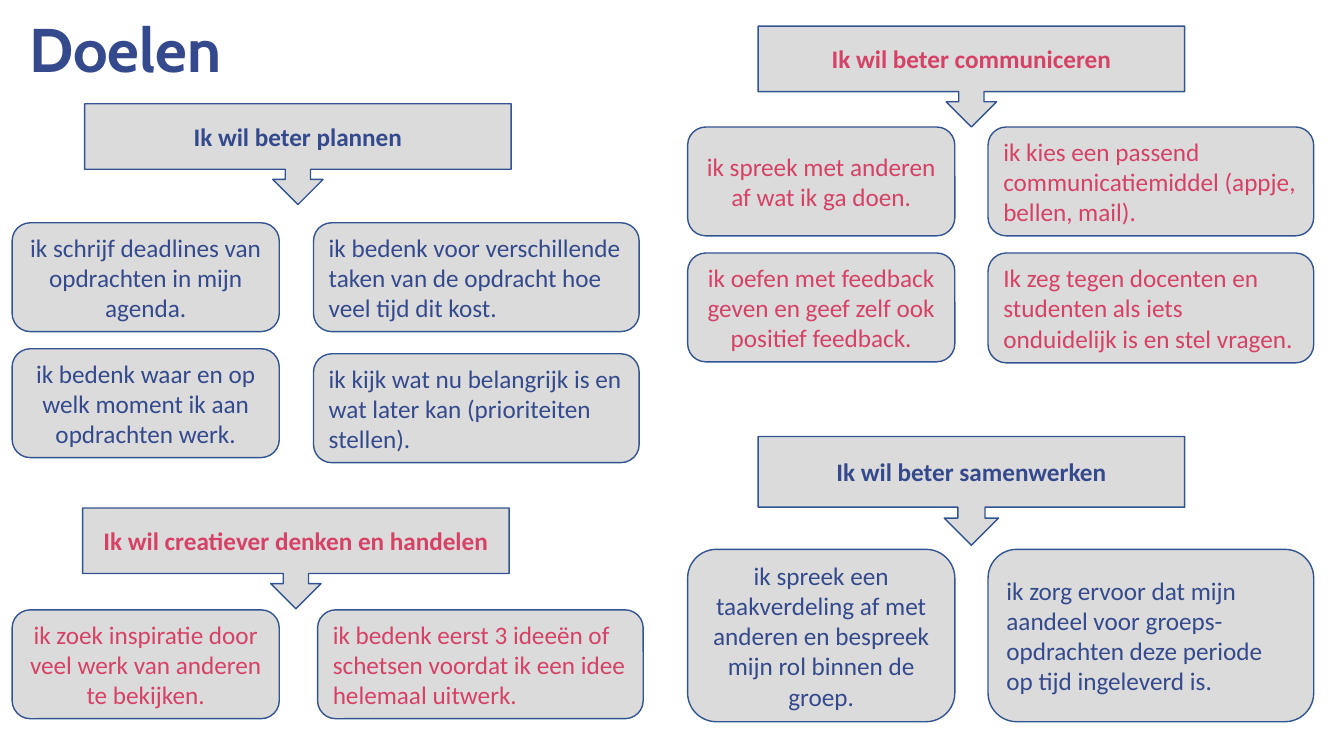
"""Build the slide "Doelen": four learning goals, each with its actions."""
from pptx import Presentation
from pptx.dml.color import RGBColor
from pptx.enum.shapes import MSO_SHAPE
from pptx.enum.text import MSO_ANCHOR, PP_ALIGN
from pptx.util import Inches, Pt

CALLOUT = MSO_SHAPE.DOWN_ARROW_CALLOUT
ROUNDED = MSO_SHAPE.ROUNDED_RECTANGLE
MIDDLE = MSO_ANCHOR.MIDDLE
LEFT, CENTER = PP_ALIGN.LEFT, PP_ALIGN.CENTER
COLORS = {"blue": "344A8D", "pink": "D64166", "fill": "DBDBDB", "line": "325491"}
GOAL_WIDTH, NARROW, WIDE = 4.23, 2.65, 3.23

GOALS = [
    ("Ik wil beter plannen", "blue", 0.84, 1.03, 1, [
        (0.12, 2.21, NARROW, 1.08, CENTER,
         "ik schrijf deadlines van opdrachten in mijn agenda."),
        (3.11, 2.21, WIDE, 1.08, LEFT,
         "ik bedenk voor verschillende taken van de opdracht hoe veel tijd dit kost."),
        (0.12, 3.46, NARROW, 1.08, CENTER,
         "ik bedenk waar en op welk moment ik aan opdrachten werk."),
        (3.11, 3.51, WIDE, 1.08, LEFT,
         "ik kijk wat nu belangrijk is en wat later kan (prioriteiten stellen)."),
    ]),
    ("Ik wil beter communiceren", "pink", 7.52, 0.26, 1, [
        (6.82, 1.26, NARROW, 1.08, CENTER,
         "ik spreek met anderen af wat ik ga doen."),
        (9.8, 1.26, WIDE, 1.08, LEFT,
         "ik kies een passend communicatiemiddel (appje, bellen, mail)."),
        (6.82, 2.51, NARROW, 1.08, CENTER,
         "ik oefen met feedback geven en geef zelf ook positief feedback."),
        (9.8, 2.51, WIDE, 1.09, LEFT,
         "Ik zeg tegen docenten en studenten als iets onduidelijk is en stel vragen."),
    ]),
    ("Ik wil beter samenwerken", "blue", 7.52, 4.33, 1.08, [
        (6.82, 5.45, NARROW, 1.71, CENTER,
         "ik spreek een taakverdeling af met anderen en bespreek mijn rol binnen de groep."),
        (9.8, 5.45, WIDE, 1.71, LEFT,
         "ik zorg ervoor dat mijn aandeel voor groeps-opdrachten deze periode\n"
         "op tijd ingeleverd is."),
    ]),
    ("Ik wil creatiever denken en handelen", "pink", 0.82, 5.04, 1, [
        (0.12, 6.05, NARROW, 1.08, CENTER,
         "ik zoek inspiratie door veel werk van anderen te bekijken."),
        (3.15, 6.05, WIDE, 1.08, LEFT,
         "ik bedenk eerst 3 ideeën of schetsen voordat ik een idee helemaal uitwerk."),
    ]),
]


def write_text(box, text, color, size=18, bold=False, align=LEFT, font="Calibri"):
    frame = box.text_frame
    frame.word_wrap = True
    frame.vertical_anchor = MIDDLE
    frame.text = text
    for paragraph in frame.paragraphs:
        paragraph.alignment = align
        paragraph.font.name = font
        paragraph.font.size = Pt(size)
        paragraph.font.bold = bold
        paragraph.font.color.rgb = RGBColor.from_string(COLORS[color])


def add_box(page, kind, left, top, width, height):
    box = page.shapes.add_shape(
        kind, Inches(left), Inches(top), Inches(width), Inches(height))
    box.shadow.inherit = False
    box.fill.solid()
    box.fill.fore_color.rgb = RGBColor.from_string(COLORS["fill"])
    box.line.color.rgb = RGBColor.from_string(COLORS["line"])
    box.line.width = Pt(1)
    return box


deck = Presentation()
deck.slide_width, deck.slide_height = Inches(13.33), Inches(7.5)
page = deck.slides.add_slide(deck.slide_layouts[6])

title = page.shapes.add_textbox(Inches(0.19), Inches(0.11), Inches(11.65), Inches(0.83))
write_text(title, "Doelen", "blue", size=44, bold=True, font="Cabin")
title.text_frame.paragraphs[0].line_spacing = 0.9

for goal, color, goal_left, goal_top, goal_height, actions in GOALS:
    callout = add_box(page, CALLOUT, goal_left, goal_top, GOAL_WIDTH, goal_height)
    write_text(callout, goal, color, bold=True, align=CENTER)
    for left, top, width, height, align, action in actions:
        card = add_box(page, ROUNDED, left, top, width, height)
        write_text(card, action, color, align=align)

deck.save("out.pptx")
